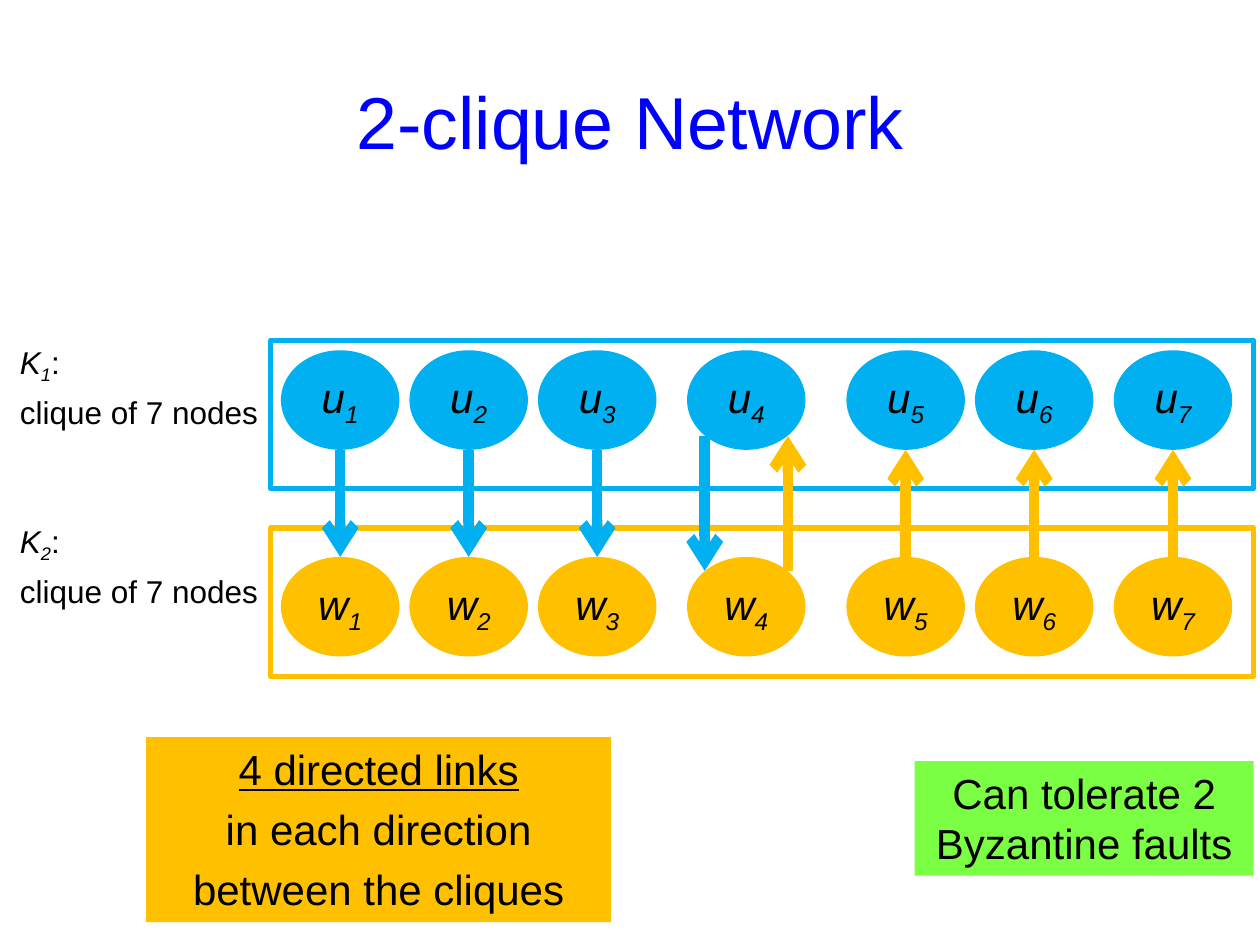
"""Build the slide showing a 2-clique network with directed links between the cliques."""
from dataclasses import dataclass

import pptx
import pptx.dml.color
import pptx.enum.shapes
import pptx.enum.text
import pptx.oxml
import pptx.oxml.ns
import pptx.util
from pptx.util import Inches

COLORS = {"upper": "00B0F0", "lower": "FFC000", "title": "0000FF",
          "text": "000000", "result": "7AFF44"}
FONT = "Arial"
SUBSCRIPT = "-25000"
LINE_GAP = 0.23

FIRST_CENTER, PITCH = 2.7, 1.02
COLUMNS = (0, 1, 2, 3.16, 4.4, 5.4, 6.48)
NODE_W, NODE_H = 0.94, 0.79
FRAME_LEFT, FRAME_W, FRAME_H = 2.15, 7.8, 1.18
SIDE_X, SIDE_Y = 0.33, 0.11

SHAPES = pptx.enum.shapes.MSO_SHAPE
CENTER = pptx.enum.text.PP_ALIGN.CENTER
LEFT = pptx.enum.text.PP_ALIGN.LEFT
MIDDLE = pptx.enum.text.MSO_ANCHOR.MIDDLE
TOP = pptx.enum.text.MSO_ANCHOR.TOP


@dataclass(frozen=True)
class Part:
    text: str
    italic: bool = False
    subscript: bool = False
    underline: bool = False


@dataclass(frozen=True)
class Box:
    left: float
    top: float
    width: float
    height: float


@dataclass(frozen=True)
class Clique:
    name: str
    letter: str
    color: str
    node_top: float
    frame_top: float
    label_top: float


@dataclass(frozen=True)
class Link:
    column: int
    downward: bool
    side: int = 0


UPPER = Clique("1", "u", "upper", 2.78, 2.7, 2.67)
LOWER = Clique("2", "w", "lower", 4.42, 4.19, 4.09)
LINKS = (Link(0, True), Link(1, True), Link(2, True), Link(3, True, -1),
         Link(3, False, 1), Link(4, False), Link(5, False), Link(6, False))


def rgb(name: str) -> pptx.dml.color.RGBColor:
    return pptx.dml.color.RGBColor.from_string(COLORS[name])


def center_x(column: int) -> float:
    return FIRST_CENTER + PITCH * COLUMNS[column]


def write(shape, lines: list[list[Part]], size: float, color: str = "text",
          align=CENTER, anchor=MIDDLE, wrap: bool = True) -> None:
    frame = shape.text_frame
    frame.word_wrap = wrap
    frame.vertical_anchor = anchor
    frame.text = "\n".join("" for _ in lines)
    for paragraph, parts in zip(frame.paragraphs, lines):
        paragraph.alignment = align
        paragraph.space_before = pptx.util.Pt(round(LINE_GAP * size, 1))
        for part in parts:
            run = paragraph.add_run()
            run.text = part.text
            run.font.name = FONT
            run.font.size = pptx.util.Pt(size)
            run.font.color.rgb = rgb(color)
            run.font.italic = part.italic
            run.font.underline = part.underline
            if part.subscript:
                run.font._element.set("baseline", SUBSCRIPT)


def draw_shape(slide, kind, box: Box, fill: str = "", outline: str = ""):
    shape = slide.shapes.add_shape(kind, Inches(box.left), Inches(box.top),
                                   Inches(box.width), Inches(box.height))
    shape.shadow.inherit = False
    if fill:
        shape.fill.solid()
        shape.fill.fore_color.rgb = rgb(fill)
    else:
        shape.fill.background()
    if outline:
        shape.line.color.rgb = rgb(outline)
        shape.line.width = pptx.util.Pt(3)
    else:
        shape.line.fill.background()
    return shape


def draw_text(slide, box: Box, lines: list[list[Part]], size: float, **style) -> None:
    caption = slide.shapes.add_textbox(Inches(box.left), Inches(box.top),
                                       Inches(box.width), Inches(box.height))
    write(caption, lines, size, **style)


def draw_clique(slide, clique: Clique) -> None:
    for column in range(len(COLUMNS)):
        node = draw_shape(slide, SHAPES.OVAL,
                          Box(center_x(column) - NODE_W / 2, clique.node_top, NODE_W, NODE_H),
                          fill=clique.color)
        write(node, [[Part(clique.letter, italic=True),
                      Part(str(column + 1), italic=True, subscript=True)]], 24, wrap=False)
    draw_shape(slide, SHAPES.RECTANGLE,
               Box(FRAME_LEFT, clique.frame_top, FRAME_W, FRAME_H), outline=clique.color)
    draw_text(slide, Box(0.06, clique.label_top, 2.11, 0.77),
              [[Part("K", italic=True), Part(clique.name, italic=True, subscript=True), Part(":")],
               [Part("clique of 7 nodes")]], 18, align=LEFT, anchor=TOP, wrap=False)


def draw_link(slide, link: Link) -> None:
    x = Inches(center_x(link.column) + link.side * SIDE_X)
    inset = abs(link.side) * SIDE_Y
    ends = [Inches(UPPER.node_top + NODE_H - inset), Inches(LOWER.node_top + inset)]
    start, end = ends if link.downward else reversed(ends)
    arrow = slide.shapes.add_connector(pptx.enum.shapes.MSO_CONNECTOR.STRAIGHT, x, start, x, end)
    arrow.line.color.rgb = rgb("upper" if link.downward else "lower")
    arrow.line.width = pptx.util.Pt(6)
    head = pptx.oxml.parse_xml(f'<a:tailEnd {pptx.oxml.ns.nsdecls("a")} type="arrow"/>')
    arrow.line._get_or_add_ln().append(head)
    arrow._element.spPr.append(
        pptx.oxml.parse_xml(f'<a:effectLst {pptx.oxml.ns.nsdecls("a")}/>'))


def main() -> None:
    deck = pptx.Presentation()
    deck.slide_width, deck.slide_height = Inches(10), Inches(7.5)
    slide = deck.slides.add_slide(deck.slide_layouts[6])
    for clique in (UPPER, LOWER):
        draw_clique(slide, clique)
    for link in LINKS:
        draw_link(slide, link)
    draw_text(slide, Box(0.75, 0.33, 8.5, 1.25), [[Part("2-clique Network")]], 42, color="title")
    summary = draw_shape(slide, SHAPES.RECTANGLE, Box(1.16, 5.85, 3.69, 1.47), fill="lower")
    write(summary, [[Part("4 directed links", underline=True)], [Part("in each direction")],
                    [Part("between the cliques")]], 24, anchor=TOP)
    result = draw_shape(slide, SHAPES.RECTANGLE, Box(7.26, 6.04, 2.69, 0.91), fill="result")
    write(result, [[Part("Can tolerate 2 Byzantine faults")]], 24, anchor=TOP)
    deck.save("out.pptx")


if __name__ == "__main__":
    main()
